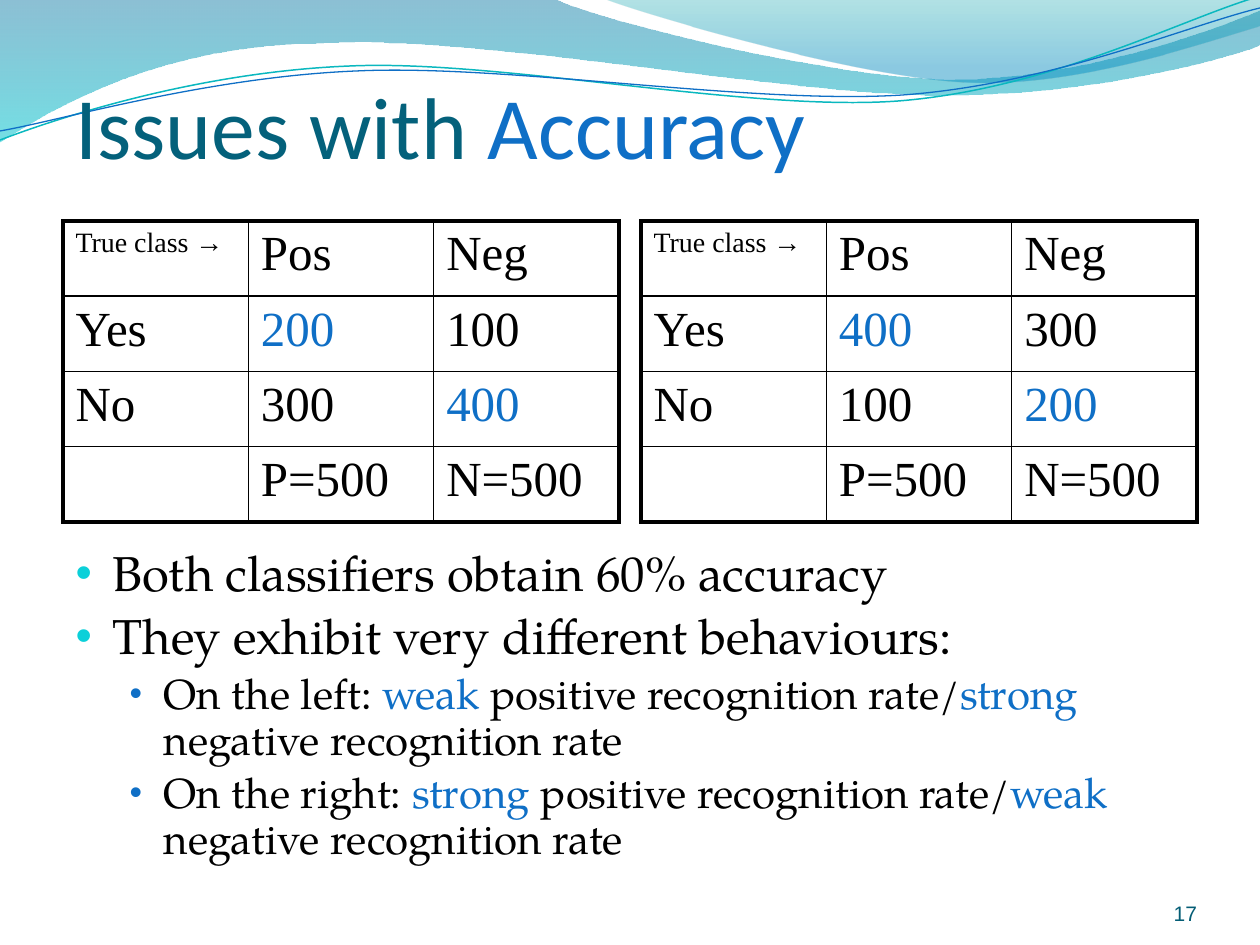
"""Build the "Issues with Accuracy" slide."""
from dataclasses import dataclass

from lxml import etree
from pptx import Presentation
from pptx import util as u
from pptx.dml.color import RGBColor
from pptx.enum import text
from pptx.oxml.ns import qn

PX = 914400 / 126
BLUE, BLACK, TEAL = "0F6FC6", "000000", "04617B"


@dataclass
class Stop:
    color: str
    position: float
    opacity: int


@dataclass
class Wave:
    start: tuple[int, int]
    segments: list[tuple[int, ...]]
    stops: tuple[Stop, ...] = ()
    line: str = ""
    weight: float = 0


@dataclass
class Matrix:
    left: int
    rows: list[list[str]]


@dataclass
class Bullet:
    content: str
    level: int = 0


@dataclass
class BulletStyle:
    size: int
    margin: int
    hanging: int
    color: str
    percent: int


WAVES = [
    Wave((0, -1), [(554, -1), (600, 21, 837, 79, 955, 79), (1075, 79, 1207, 33, 1260, 11),
                   (1261, 45), (1239, 55, 1096, 96, 940, 95), (784, 95, 481, 35, 324, 43),
                   (163, 44, 58, 105, -1, 142)],
         stops=(Stop("0074A1", 0, 45), Stop("00C6CF", 1, 55))),
    Wave((604, -1), [(641, 14, 859, 78, 969, 82), (1079, 87, 1211, 40, 1260, 26), (1260, 0)],
         stops=(Stop("00A1A9", 0, 30), Stop("008BBF", 0.8, 45))),
    Wave((0, 140), [(60, 117, 199, 72, 349, 66), (498, 59, 747, 112, 898, 101),
                    (1050, 89, 1182, 19, 1257, -3)], line="0AB8BF", weight=0.85),
    Wave((0, 131), [(59, 121, 207, 77, 357, 71), (508, 64, 752, 105, 903, 95),
                    (1053, 84, 1186, 26, 1260, 8)], line=BLUE, weight=0.75),
]
HEADER = ["True class →", "Pos", "Neg"]
TOTALS = ["", "P=500", "N=500"]
MATRICES = [
    Matrix(63, [HEADER, ["Yes", "|200|", "100"], ["No", "300", "|400|"], TOTALS]),
    Matrix(641, [HEADER, ["Yes", "|400|", "300"], ["No", "100", "|200|"], TOTALS]),
]
BULLETS = [
    Bullet("Both classifiers obtain 60% accuracy"),
    Bullet("They exhibit very different behaviours:"),
    Bullet("On the left: |weak |positive recognition rate/|strong |negative recognition rate", 1),
    Bullet("On the right: |strong| positive recognition rate/|weak |negative recognition rate", 1),
]
BULLET_STYLES = [BulletStyle(28, 37, 37, "0BD0D9", 95), BulletStyle(24, 88, 34, BLUE, 85)]


def emu(px: float) -> int:
    """Turn px into EMU."""
    return round(px * PX)


def rgb(color: str) -> RGBColor:
    """Turn a hex string into a colour."""
    return RGBColor.from_string(color)


def place(shape, left: int, top: int, width: int, height: int) -> None:
    """Move and size a shape in px."""
    shape.left, shape.top, shape.width, shape.height = map(emu, (left, top, width, height))


def write(para, content: str, font: str, size: float, color: str = BLACK) -> None:
    """Write text into a paragraph, with the parts between bars in blue."""
    for index, part in enumerate(content.split("|")):
        if part:
            span = para.add_run()
            span.text = part
            span.font.name, span.font.size = font, u.Pt(size)
            span.font.color.rgb = rgb(BLUE if index % 2 else color)


def bend(shape, wave: Wave) -> None:
    """Turn the straight segments that have control points into Bézier curves."""
    lines = list(shape._element.iter(qn("a:lnTo")))
    for line, segment in zip(lines, wave.segments):
        if len(segment) == 6:
            curve = etree.Element(qn("a:cubicBezTo"))
            for x, y in zip(segment[::2], segment[1::2]):
                etree.SubElement(curve, qn("a:pt"), x=str(emu(x) - shape.left),
                                 y=str(emu(y) - shape.top))
            line.getparent().replace(line, curve)


def draw_wave(page, wave: Wave, depth: int) -> None:
    """Draw a wave behind the text, as a gradient band or a thin line."""
    builder = page.shapes.build_freeform(*map(emu, wave.start))
    ends = [(emu(segment[-2]), emu(segment[-1])) for segment in wave.segments]
    builder.add_line_segments(ends, close=bool(wave.stops))
    shape = builder.convert_to_shape()
    bend(shape, wave)
    shape.shadow.inherit = False
    if wave.stops:
        shape.line.fill.background()
        shape.fill.gradient()
        shape.fill.gradient_angle = 270
        for target, stop in zip(shape.fill.gradient_stops, wave.stops):
            target.color.rgb, target.position = rgb(stop.color), stop.position
        colors = shape._element.spPr.find(qn("a:gradFill")).iter(qn("a:srgbClr"))
        for color, stop in zip(colors, wave.stops):
            etree.SubElement(color, qn("a:alpha"), val=str(stop.opacity * 1000))
    else:
        shape.fill.background()
        shape.line.color.rgb, shape.line.width = rgb(wave.line), u.Pt(wave.weight)
    page.shapes._spTree.insert(2 + depth, shape._element)


def set_borders(cell, thick_sides: dict[str, bool]) -> None:
    """Give a cell black borders, thick on the outer sides."""
    properties = cell._tc.get_or_add_tcPr()
    for index, (side, thick) in enumerate(thick_sides.items()):
        border = etree.Element(qn(f"a:ln{side}"), w=str(u.Pt(2.25 if thick else 1)))
        fill = etree.SubElement(border, qn("a:solidFill"))
        etree.SubElement(fill, qn("a:srgbClr"), val=BLACK)
        properties.insert(index, border)


def draw_matrix(page, matrix: Matrix) -> None:
    """Draw a confusion matrix as a table."""
    rows, columns = len(matrix.rows), len(matrix.rows[0])
    table = page.shapes.add_table(rows, columns, emu(matrix.left), emu(221),
                                  emu(556), emu(301)).table
    table.first_row = table.horz_banding = False
    for r, values in enumerate(matrix.rows):
        for c, value in enumerate(values):
            cell = table.cell(r, c)
            cell.fill.background()
            set_borders(cell, {"L": c == 0, "R": c == columns - 1,
                               "T": r == 0, "B": r == rows - 1})
            write(cell.text_frame.paragraphs[0], value, "Times New Roman",
                  16 if r == c == 0 else 28)


def write_bullet(para, bullet: Bullet) -> None:
    """Write one bulleted paragraph in the style of its level."""
    style = BULLET_STYLES[bullet.level]
    para.level, para.line_spacing = bullet.level, 0.9
    para.space_before = u.Pt(0.2 * style.size)
    properties = para._p.get_or_add_pPr()
    properties.set("marL", str(emu(style.margin)))
    properties.set("indent", str(-emu(style.hanging)))
    color = etree.SubElement(properties, qn("a:buClr"))
    etree.SubElement(color, qn("a:srgbClr"), val=style.color)
    etree.SubElement(properties, qn("a:buSzPct"), val=str(style.percent * 1000))
    etree.SubElement(properties, qn("a:buFont"), typeface="Arial")
    etree.SubElement(properties, qn("a:buChar"), char="•")
    write(para, bullet.content, "TeX Gyre Pagella", style.size)


def main() -> None:
    """Build and save the deck."""
    deck = Presentation()
    deck.slide_width, deck.slide_height = emu(1260), emu(945)
    page = deck.slides.add_slide(deck.slide_layouts[1])
    page.background.fill.solid()
    page.background.fill.fore_color.rgb = rgb("FFFFFF")
    for depth, wave in enumerate(WAVES):
        draw_wave(page, wave, depth)

    title, body = page.shapes.title, page.placeholders[1]
    place(title, 63, 66, 1134, 157)
    place(body, 63, 543, 1134, 349)
    for box in (title, body):
        box.text_frame.auto_size = text.MSO_AUTO_SIZE.NONE
        box.text_frame.vertical_anchor = text.MSO_ANCHOR.TOP
    heading = title.text_frame.paragraphs[0]
    heading.alignment = text.PP_ALIGN.LEFT
    write(heading, "Issues with |Accuracy|", "Calibri", 50, TEAL)
    for index, bullet in enumerate(BULLETS):
        frame = body.text_frame
        write_bullet(frame.add_paragraph() if index else frame.paragraphs[0], bullet)

    for matrix in MATRICES:
        draw_matrix(page, matrix)

    number = page.shapes.add_textbox(0, 0, 0, 0)
    place(number, 1092, 876, 105, 50)
    frame = number.text_frame
    frame.word_wrap, frame.vertical_anchor = True, text.MSO_ANCHOR.BOTTOM
    frame.margin_left = frame.margin_right = frame.margin_top = frame.margin_bottom = 0
    frame.paragraphs[0].alignment = text.PP_ALIGN.RIGHT
    write(frame.paragraphs[0], "17", "Arial", 12, "045D75")
    deck.save("out.pptx")


if __name__ == "__main__":
    main()
